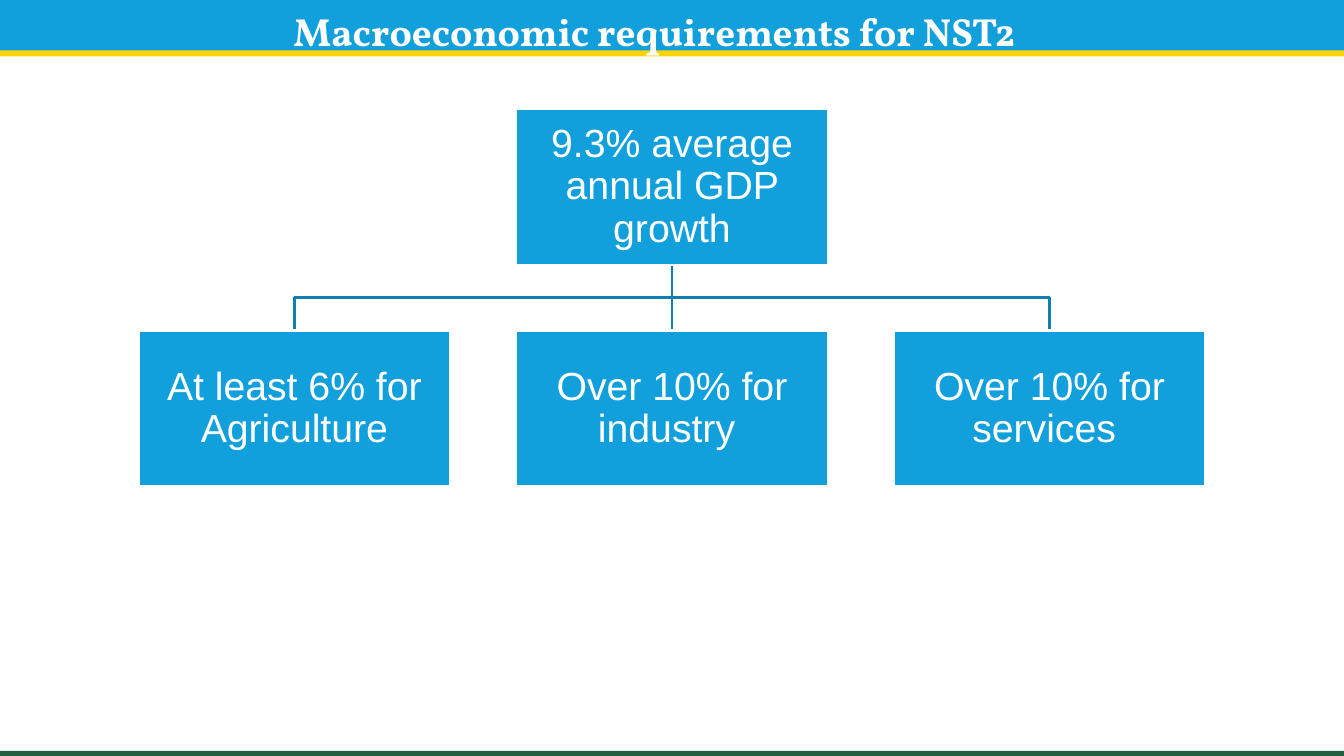
from lxml.etree import SubElement
from pptx import Presentation
from pptx.dml.color import RGBColor
from pptx.enum.shapes import MSO_CONNECTOR as Link, MSO_SHAPE as Preset
from pptx.enum.text import MSO_ANCHOR as Anchor, MSO_AUTO_SIZE as AutoSize, PP_ALIGN as Align
from pptx.oxml.ns import qn
from pptx.util import Inches, Pt

# Content
TITLE = "Macroeconomic requirements for NST2"
GOAL = "9.3% average annual GDP growth"
SECTORS = ["At least 6% for Agriculture", "Over 10% for industry ", "Over 10% for services "]

COLORS = {"blue": "11A0DB", "yellow": "F9D20A", "green": "20603E",
          "line": "0E80AF", "white": "FFFFFF"}

# Grid, in inches
WIDTH, HEIGHT = 13.33, 7.5
BANDS = [("yellow", 0.06, 0.5), ("blue", 0, 0.5), ("green", 7.45, 0.05)]
BOX_WIDTH, BOX_HEIGHT = 3.07, 1.52
COLUMN_STEP, ROW_STEP = 3.745, 2.2
BOX_WIDTH, BOX_HEIGHT = 3.1, 1.55
GOAL_TOP = 1.08
SECTOR_TOP = GOAL_TOP + ROW_STEP
MIDDLE = WIDTH / 2


def color(name):
    return RGBColor.from_string(COLORS[name])


def add_rectangle(page, left, top, width, height, fill):
    shape = page.shapes.add_shape(Preset.RECTANGLE, Inches(left), Inches(top),
                                  Inches(width), Inches(height))
    shape.shadow.inherit = False
    shape.fill.solid()
    shape.fill.fore_color.rgb = color(fill)
    shape.line.fill.background()
    return shape


def write(frame, text, font, spacing, anchor, margin, bold=False):
    frame.word_wrap = True
    frame.auto_size = AutoSize.NONE
    frame.vertical_anchor = anchor
    frame.margin_left = frame.margin_right = Inches(margin)
    frame.margin_top = frame.margin_bottom = Inches(margin)
    para = frame.paragraphs[0]
    para.alignment = Align.CENTER
    para.line_spacing = spacing
    span = para.add_run()
    span.text = text
    span.font.name, span.font.size, span.font.bold = font, Pt(28), bold
    span.font.color.rgb = color("white")


def add_box(page, center, top, text):
    box = add_rectangle(page, center - BOX_WIDTH / 2, top, BOX_WIDTH, BOX_HEIGHT, "blue")
    box.line.color.rgb = color("white")
    box.line.width = Pt(2)
    write(box.text_frame, text, "Arial", 0.9, Anchor.MIDDLE, 0.02)
    return box


def style_line(shape):
    shape.line.color.rgb = color("line")
    shape.line.width = Pt(2)


def add_elbow(page, center):
    start = GOAL_TOP + BOX_HEIGHT
    bend = (start + SECTOR_TOP) / 2
    builder = page.shapes.build_freeform(Inches(MIDDLE), Inches(start))
    corners = [(MIDDLE, bend), (center, bend), (center, SECTOR_TOP)]
    builder.add_line_segments([(Inches(x), Inches(y)) for x, y in corners], close=False)
    elbow = builder.convert_to_shape()
    elbow.shadow.inherit = False
    elbow.fill.background()
    style_line(elbow)


def main():
    deck = Presentation()
    deck.slide_width, deck.slide_height = Inches(WIDTH), Inches(HEIGHT)
    page = deck.slides.add_slide(deck.slide_layouts[5])

    # Bands, with the title in front of them
    for fill, top, height in BANDS:
        add_rectangle(page, 0, top, WIDTH, height, fill)
    title = page.shapes.title
    title.left, title.top = Inches(0.08), Inches(-0.16)
    title.width, title.height = Inches(12.82), Inches(0.41)
    write(title.text_frame, TITLE, "Vollkorn", 1.5, Anchor.TOP, 0, bold=True)
    page.shapes._spTree.append(title._element)

    # Branches, behind the boxes
    centers = [MIDDLE + (index - 1) * COLUMN_STEP for index in range(len(SECTORS))]
    add_elbow(page, centers[2])
    trunk = page.shapes.add_connector(Link.STRAIGHT, 0, 0, 0, 0)
    SubElement(trunk._element.spPr, qn("a:effectLst"))
    style_line(trunk)
    add_elbow(page, centers[0])

    # Goal and sectors
    goal = add_box(page, MIDDLE, GOAL_TOP, GOAL)
    sectors = [add_box(page, center, SECTOR_TOP, text)
               for center, text in zip(centers, SECTORS)]
    trunk.begin_connect(goal, 2)
    trunk.end_connect(sectors[1], 0)

    deck.save("out.pptx")


if __name__ == "__main__":
    main()
